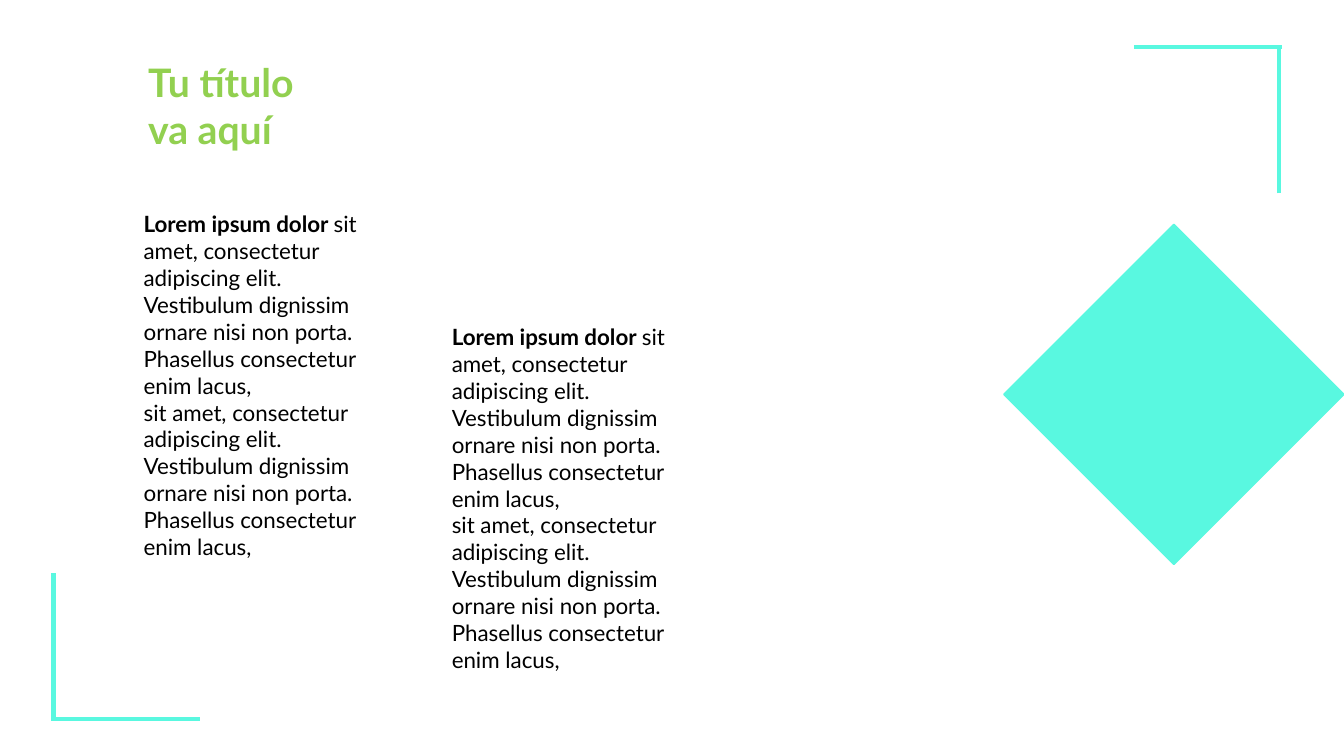
from pptx import Presentation
from pptx.dml.color import RGBColor
from pptx.enum.shapes import MSO_CONNECTOR, MSO_SHAPE
from pptx.enum.text import MSO_ANCHOR, MSO_AUTO_SIZE, PP_ALIGN
from pptx.oxml.ns import qn
from pptx.util import Pt
from lxml import etree

STRAIGHT = MSO_CONNECTOR.STRAIGHT
DIAMOND = MSO_SHAPE.DIAMOND
TOP = MSO_ANCHOR.TOP
LEFT = PP_ALIGN.LEFT
NO_AUTOFIT = MSO_AUTO_SIZE.NONE
TITLE_ONLY = 5

FONT = "Lato"
TURQUOISE = "59F8E0"
GREEN = "92D050"
BLACK = "000000"
WHITE = "FFFFFF"

LEAD = "Lorem ipsum dolor "
BODY = ("sit amet, consectetur adipiscing elit. Vestibulum dignissim "
        "ornare nisi non porta. Phasellus consectetur enim lacus,")


def color(hex_string):
    return RGBColor.from_string(hex_string)


def add_run(paragraph, text, size, hex_string, bold=False):
    run = paragraph.add_run()
    run.text = text
    run.font.name = FONT
    run.font.size = Pt(size)
    run.font.bold = bold
    run.font.color.rgb = color(hex_string)


def fill_frame(frame, paragraphs, size, hex_string):
    """Write paragraphs, each a list of (text, bold) runs."""
    frame.word_wrap = True
    frame.auto_size = NO_AUTOFIT
    frame.vertical_anchor = TOP
    for index, runs in enumerate(paragraphs):
        paragraph = frame.add_paragraph() if index else frame.paragraphs[0]
        paragraph.alignment = LEFT
        for text, bold in runs:
            add_run(paragraph, text, size, hex_string, bold)


def set_title(slide, lines, left, top, width, height):
    title = slide.shapes.title
    title.left, title.top = Pt(left), Pt(top)
    title.width, title.height = Pt(width), Pt(height)
    fill_frame(title.text_frame, [[(line, True)] for line in lines], 28, GREEN)


def add_text_column(slide, left, top):
    box = slide.shapes.add_textbox(Pt(left), Pt(top), Pt(179.3), Pt(278.6))
    paragraphs = [[(LEAD, True), (BODY, False)], [(BODY, False)]]
    fill_frame(box.text_frame, paragraphs, 16, BLACK)


def add_diamond(slide, left, top, side):
    shape = slide.shapes.add_shape(DIAMOND, Pt(left), Pt(top), Pt(side), Pt(side))
    shape.shadow.inherit = False
    shape.fill.solid()
    shape.fill.fore_color.rgb = color(TURQUOISE)
    shape.line.color.rgb = color(TURQUOISE)
    shape.line.width = Pt(1)


def add_corner(slide, *lines):
    """Group the two lines that frame a corner of the slide."""
    group = slide.shapes.add_group_shape()
    for line in lines:
        connector = group.shapes.add_connector(STRAIGHT, *map(Pt, line))
        connector.line.color.rgb = color(TURQUOISE)
        connector.line.width = Pt(3)
        etree.SubElement(connector._element.spPr, qn("a:effectLst"))


def main():
    presentation = Presentation()
    presentation.slide_width, presentation.slide_height = Pt(960), Pt(540)
    slide = presentation.slides.add_slide(presentation.slide_layouts[TITLE_ONLY])
    slide.background.fill.solid()
    slide.background.fill.fore_color.rgb = color(WHITE)

    # Diamond at the right edge
    add_diamond(slide, 717, 160.2, 243)

    # Title and text columns
    set_title(slide, ["Tu título", "va aquí"], 98.6, 38.2, 217.4, 74.9)
    add_text_column(slide, 95.5, 146.9)
    add_text_column(slide, 315.6, 227.5)

    # Corner frames: bottom left, top right
    add_corner(slide, (38.2, 409.5, 38.2, 514.8), (142.6, 513.4, 36.7, 513.4))
    add_corner(slide, (913.7, 138.2, 913.7, 32.4), (810, 33.8, 915.8, 33.8))

    presentation.save("out.pptx")


if __name__ == "__main__":
    main()
